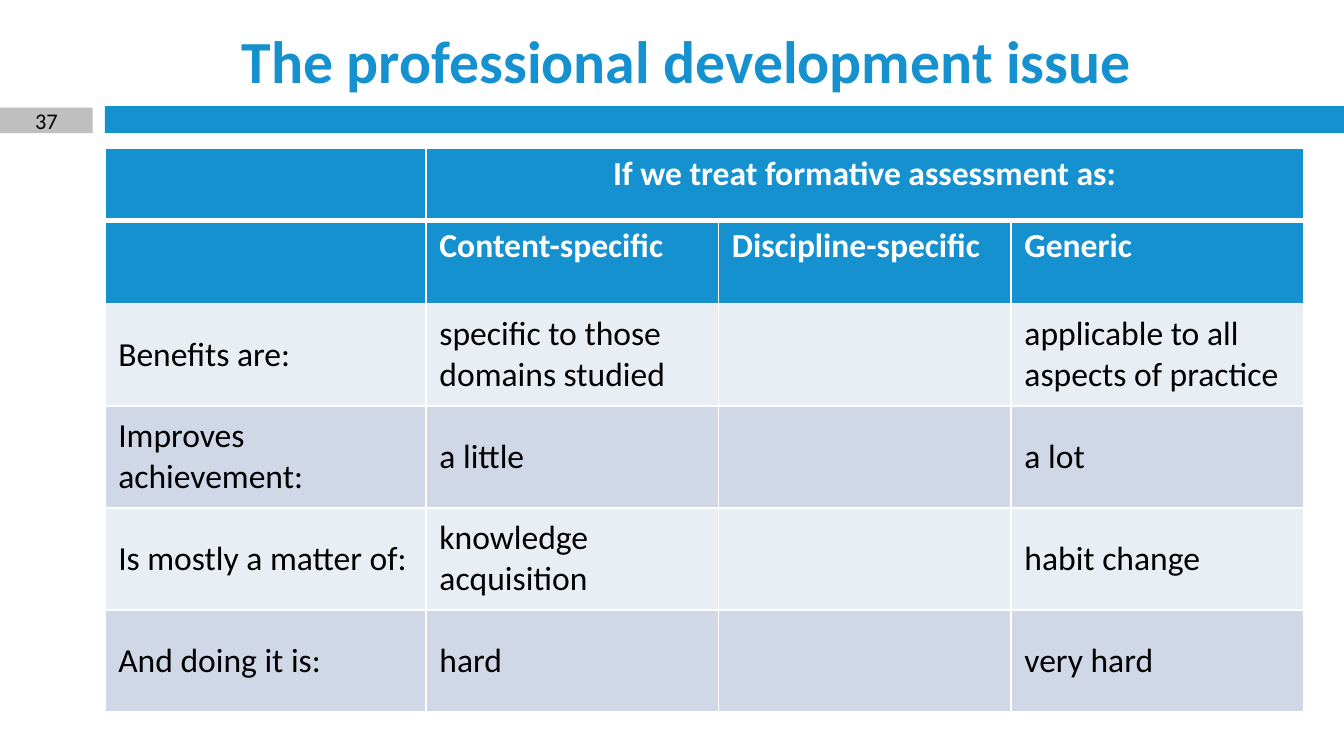
"""Build the slide on the professional development issue, its table growing row by row."""
from lxml import etree
from pptx import Presentation
from pptx import util as u
from pptx.dml.color import RGBColor
from pptx.enum import shapes, text
from pptx.oxml import ns

BLUE = RGBColor(0x16, 0x91, 0xD0)
GREY = RGBColor(0xBF, 0xBF, 0xBF)
PALE = RGBColor(0xE9, 0xED, 0xF4)
MID = RGBColor(0xD0, 0xD8, 0xE8)
WHITE = RGBColor(0xFF, 0xFF, 0xFF)
BLACK = RGBColor(0x00, 0x00, 0x00)

LEFT = u.Inches(0.78)
WIDTH, FIRST = 8.92, 2.39
COLUMNS = [FIRST] + [(WIDTH - FIRST) / 3] * 3
ROWS = [0.54, 0.62] + [0.76] * 4
CELLS = [
    ["", "If we treat formative assessment as:", "", ""],
    ["", "Content-specific", "Discipline-specific", "Generic"],
    ["Benefits are:", "specific to those domains studied", "",
     "applicable to all aspects of practice"],
    ["Improves achievement:", "a little", "", "a lot"],
    ["Is mostly a matter of:", "knowledge acquisition", "", "habit change"],
    ["And doing it is:", "hard", "", "very hard"],
]


def format_text(p, size, color, bold=False, align=text.PP_ALIGN.CENTER):
    p.alignment = align
    for r in p.runs:
        r.font.name = "Calibri"
        r.font.size = u.Pt(size)
        r.font.bold = bold
        r.font.color.rgb = color


def add_borders(cell, bottom):
    tcPr = cell._tc.get_or_add_tcPr()
    for i, (side, width) in enumerate([("lnL", 1), ("lnR", 1), ("lnT", 1), ("lnB", bottom)]):
        ln = etree.Element(ns.qn("a:" + side), w=str(u.Pt(width)))
        fill = etree.SubElement(ln, ns.qn("a:solidFill"))
        etree.SubElement(fill, ns.qn("a:srgbClr"), val=str(WHITE))
        tcPr.insert(i, ln)


prs = Presentation()
prs.slide_width = u.Inches(10)
prs.slide_height = prs.slide_width * 9 // 16
s = prs.slides.add_slide(prs.slide_layouts[5])

number_box = [0, u.Inches(0.8), u.Inches(0.69), u.Inches(0.19)]
band_box = [LEFT, u.Inches(0.79), prs.slide_width - LEFT, u.Inches(0.2)]
for box, color in [(band_box, BLUE), (number_box, GREY)]:
    sp = s.shapes.add_shape(shapes.MSO_SHAPE.RECTANGLE, *box)
    sp.shadow.inherit = False
    sp.fill.solid()
    sp.fill.fore_color.rgb = color
    sp.line.fill.background()

title = s.shapes.title
title.left, title.top = LEFT, u.Inches(0.19)
title.width, title.height = u.Inches(8.66), u.Inches(0.51)
number = s.shapes.add_textbox(*number_box)

for sp, words, size, color, bold in [
    (title, "The professional development issue", 32, BLUE, True),
    (number, "37", 12, BLACK, False),
]:
    tf = sp.text_frame
    tf.text = words
    tf.word_wrap = True
    tf.auto_size = text.MSO_AUTO_SIZE.NONE
    tf.vertical_anchor = text.MSO_ANCHOR.MIDDLE
    tf.margin_left = tf.margin_right = tf.margin_top = tf.margin_bottom = 0
    format_text(tf.paragraphs[0], size, color, bold)

for count in range(len(ROWS), 1, -1):
    table = s.shapes.add_table(
        count, len(COLUMNS), LEFT, u.Inches(1.1),
        u.Inches(WIDTH), u.Inches(sum(ROWS[:count]))).table
    for column, width in zip(table.columns, COLUMNS):
        column.width = u.Inches(width)
    for row, height in zip(table.rows, ROWS):
        row.height = u.Inches(height)
    table.cell(0, 1).merge(table.cell(0, 3))

    for i, row in enumerate(CELLS[:count]):
        header = i < 2
        for j, words in enumerate(row):
            cell = table.cell(i, j)
            cell.fill.solid()
            cell.fill.fore_color.rgb = BLUE if header else (PALE, MID)[i % 2]
            if i == 0:
                add_borders(cell, 3)
            cell.margin_left = cell.margin_right = u.Inches(0.1)
            cell.margin_top = cell.margin_bottom = u.Inches(0.04)
            cell.vertical_anchor = text.MSO_ANCHOR.TOP if header else text.MSO_ANCHOR.MIDDLE
            if words:
                cell.text_frame.text = words
                format_text(cell.text_frame.paragraphs[0], 18, WHITE if header else BLACK, header,
                            text.PP_ALIGN.CENTER if i == 0 else text.PP_ALIGN.LEFT)

prs.save("out.pptx")
